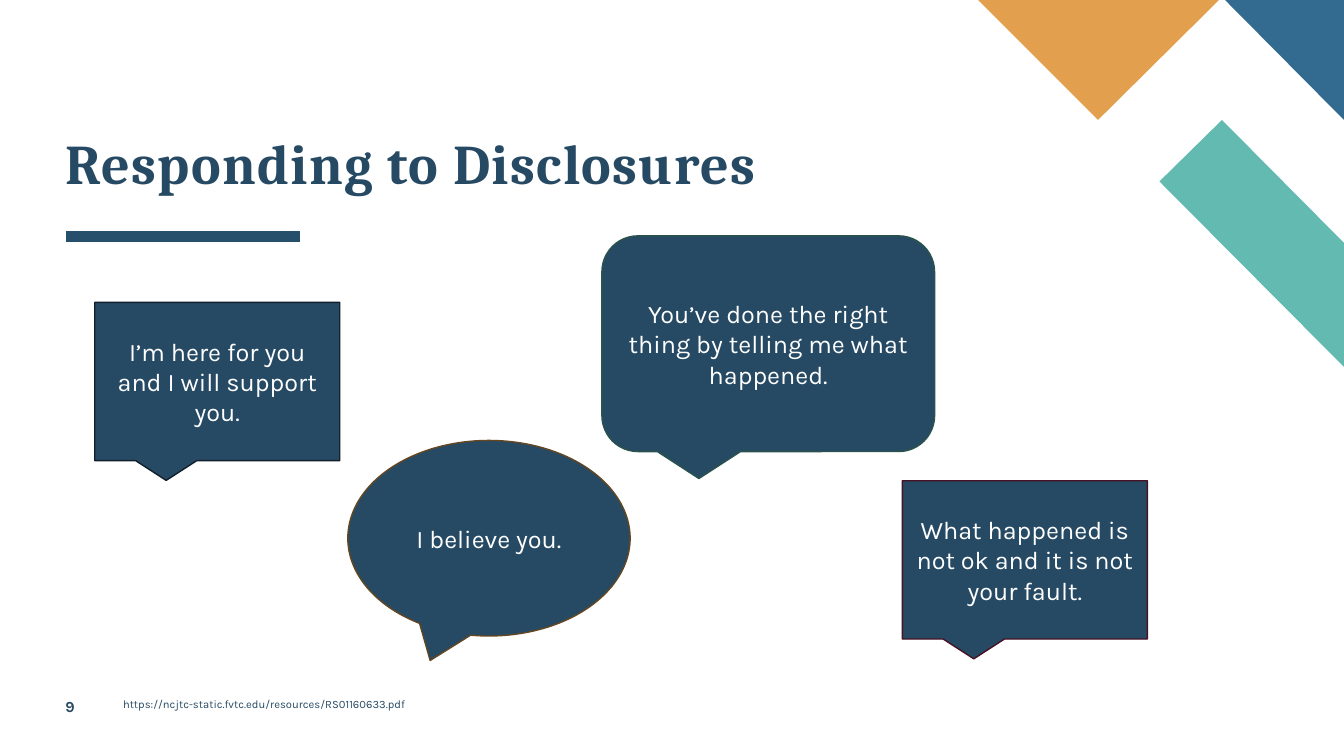
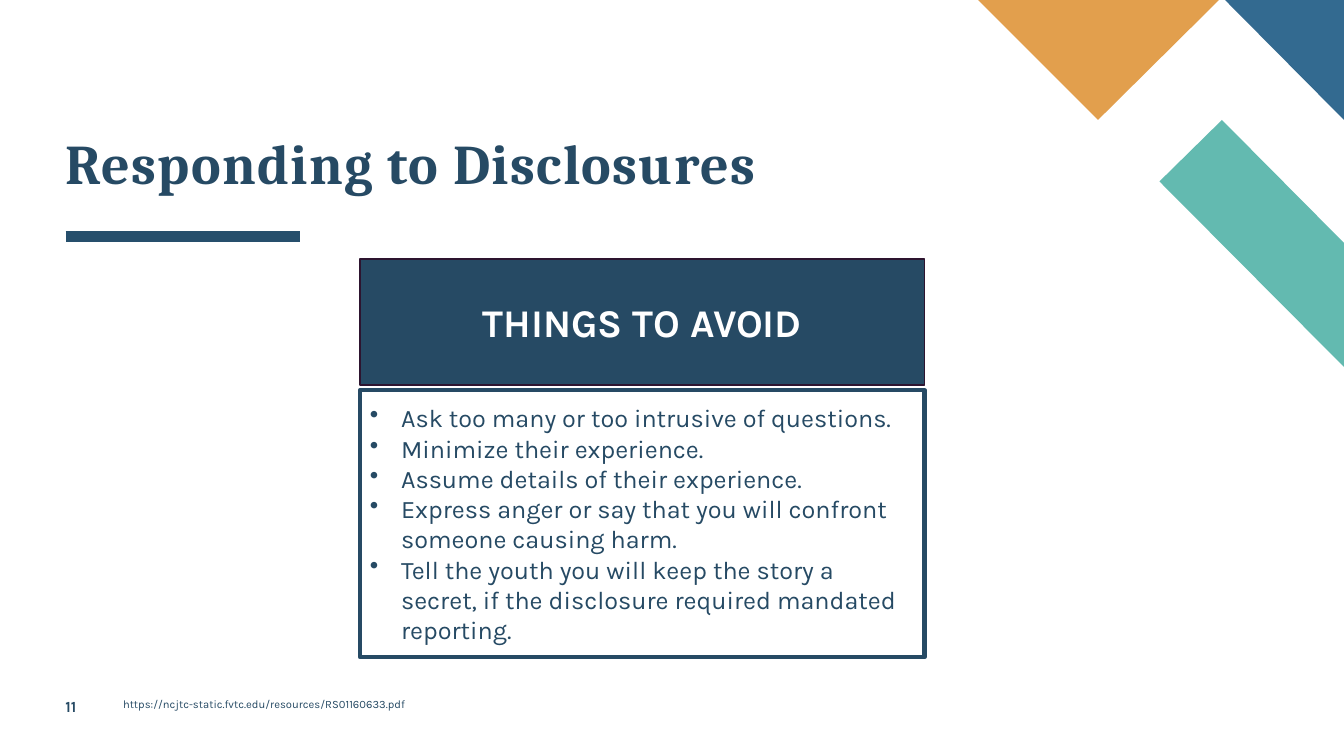
from dataclasses import dataclass

from lxml import etree
from pptx import Presentation
from pptx import util as u
from pptx.dml.color import RGBColor
from pptx.enum import shapes, text
from pptx.oxml import ns


@dataclass(frozen=True)
class Theme:
    # Colours
    navy: str = "264A64"
    rule: str = "264F6C"
    blue: str = "336A90"
    teal: str = "63BAB0"
    orange: str = "E29F4D"
    white: str = "FFFFFF"
    # Fonts and type sizes
    heading_font: str = "Cambria"
    body_font: str = "Karla"
    title_size: int = 40
    banner_size: int = 28
    body_size: int = 18
    number_size: int = 11
    source_size: int = 8


THEME = Theme()
WIDTH, HEIGHT = 13.33, 7.5
LEFT = 0.65
TITLE = "Responding to Disclosures"
SOURCE = "https://ncjtc-static.fvtc.edu/resources/RS01160633.pdf"
SHAPE = shapes.MSO_SHAPE
CENTER = {"alignment": text.PP_ALIGN.CENTER}
NO_INSETS = dict.fromkeys(
    ("margin_left", "margin_top", "margin_right", "margin_bottom"), 0)

# Corner decoration: colour and outline, running off the slide edge
CORNER = [
    (THEME.teal, [(WIDTH, 3.64), (WIDTH, 2.41), (12.12, 1.19), (11.5, 1.8)]),
    (THEME.blue, [(WIDTH, 1.19), (WIDTH, 0), (12.15, 0)]),
    (THEME.orange, [(9.7, 0), (10.89, 1.19), (12.09, 0)]),
]

# Speech bubbles: preset, place, outline colour, words
BUBBLES = [
    (SHAPE.RECTANGULAR_CALLOUT, (0.94, 3, 2.43, 1.57), "11202C",
     "I’m here for you and I will support you."),
    (SHAPE.ROUNDED_RECTANGULAR_CALLOUT, (5.97, 2.34, 3.3, 2.14), "2B524D",
     "You’ve done the right thing by telling me what happened."),
    (SHAPE.OVAL_CALLOUT, (3.45, 4.37, 2.8, 1.94), "634622",
     "I believe you."),
    (SHAPE.RECTANGULAR_CALLOUT, (8.95, 4.77, 2.43, 1.57), "471225",
     "What happened is not ok and it is not your fault."),
]

THINGS_TO_AVOID = [
    "Ask too many or too intrusive of questions.",
    "Minimize their experience.",
    "Assume details of their experience.",
    "Express anger or say that you will confront someone causing harm.",
    "Tell the youth you will keep the story a secret, "
    "if the disclosure required mandated reporting.",
]


def inches(values):
    return [u.Inches(value) for value in values]


def apply(target, formats):
    for name, value in formats.items():
        setattr(target, name, value)


def paint(box, fill, line=None, width=1):
    box.shadow.inherit = False
    box.fill.solid()
    box.fill.fore_color.rgb = RGBColor.from_string(fill)
    if line is None:
        box.line.fill.background()
    else:
        box.line.color.rgb = RGBColor.from_string(line)
        box.line.width = u.Pt(width)


def add_bullet(para, indent=0.31):
    props = para._p.get_or_add_pPr()
    props.set("marL", str(u.Inches(indent)))
    props.set("indent", str(-u.Inches(indent)))
    etree.SubElement(props, ns.qn("a:buChar")).set("char", "•")


def write(box, lines, size, color, font=THEME.body_font, bold=False,
          frame=None, layout=None, bullets=False, tracking=0):
    """Fill a box with one paragraph per line."""
    words = box.text_frame
    apply(words, {"word_wrap": True, **(frame or {})})
    for index, line in enumerate(lines):
        para = words.add_paragraph() if index else words.paragraphs[0]
        if bullets:
            add_bullet(para)
        apply(para, layout or {})
        span = para.add_run()
        span.text = line
        apply(span.font, {"name": font, "size": u.Pt(size), "bold": bold})
        span.font.color.rgb = RGBColor.from_string(color)
        if tracking:
            span.font._element.set("spc", str(tracking * 100))


def add_text(page, place, line, size, **style):
    box = page.shapes.add_textbox(*inches(place))
    write(box, [line], size, THEME.navy, **style)


def add_panel(page, preset, place, fill, line, lines, size, color,
              width=1, **style):
    box = page.shapes.add_shape(preset, *inches(place))
    paint(box, fill, line, width)
    middle = {"vertical_anchor": text.MSO_ANCHOR.MIDDLE}
    write(box, lines, size, color, frame=middle, **style)


def add_corner(page):
    for color, outline in CORNER:
        start, *rest = [inches(point) for point in outline]
        builder = page.shapes.build_freeform(*start)
        builder.add_line_segments(rest, close=True)
        paint(builder.convert_to_shape(), color)


def add_rule(page):
    rule = page.shapes.add_connector(
        shapes.MSO_CONNECTOR.STRAIGHT, *inches((LEFT, 2.35, 2.98, 2.35)))
    rule.line.color.rgb = RGBColor.from_string(THEME.rule)
    rule.line.width = u.Pt(8)
    etree.SubElement(rule._element.spPr, ns.qn("a:effectLst"))


def add_page(deck, number):
    """Start a slide with the shared decoration, title and footer."""
    page = deck.slides.add_slide(deck.slide_layouts[6])
    add_corner(page)
    add_rule(page)
    add_text(page, (LEFT, 0.22, 10.08, 1.72), TITLE, THEME.title_size,
             font=THEME.heading_font, bold=True, tracking=1,
             frame={**NO_INSETS, "vertical_anchor": text.MSO_ANCHOR.BOTTOM},
             layout={"line_spacing": 0.8})
    add_text(page, (LEFT, 6.92, 0.57, 0.27), str(number), THEME.number_size,
             bold=True, frame=NO_INSETS)
    add_text(page, (1.22, 6.88, 9.75, 0.4), SOURCE, THEME.source_size,
             frame={"margin_left": 0}, layout={"line_spacing": 0.9})
    return page


def add_supportive_words(deck):
    page = add_page(deck, 9)
    for preset, place, outline, words in BUBBLES:
        add_panel(page, preset, place, THEME.navy, outline, [words],
                  THEME.body_size, THEME.white, layout=CENTER)


def add_things_to_avoid(deck):
    page = add_page(deck, 11)
    left, width = 3.57, 5.6
    add_panel(page, SHAPE.RECTANGLE, (left, 2.57, width, 1.25),
              THEME.navy, "2D142F", ["THINGS TO AVOID"],
              THEME.banner_size, THEME.white, bold=True, layout=CENTER)
    add_panel(page, SHAPE.RECTANGLE, (left, 3.87, width, 2.65),
              THEME.white, THEME.navy, THINGS_TO_AVOID,
              THEME.body_size, THEME.navy, width=3, bullets=True,
              layout={"alignment": text.PP_ALIGN.LEFT})


def main():
    deck = Presentation()
    deck.slide_width, deck.slide_height = inches((WIDTH, HEIGHT))
    add_supportive_words(deck)
    add_things_to_avoid(deck)
    deck.save("out.pptx")


if __name__ == "__main__":
    main()
